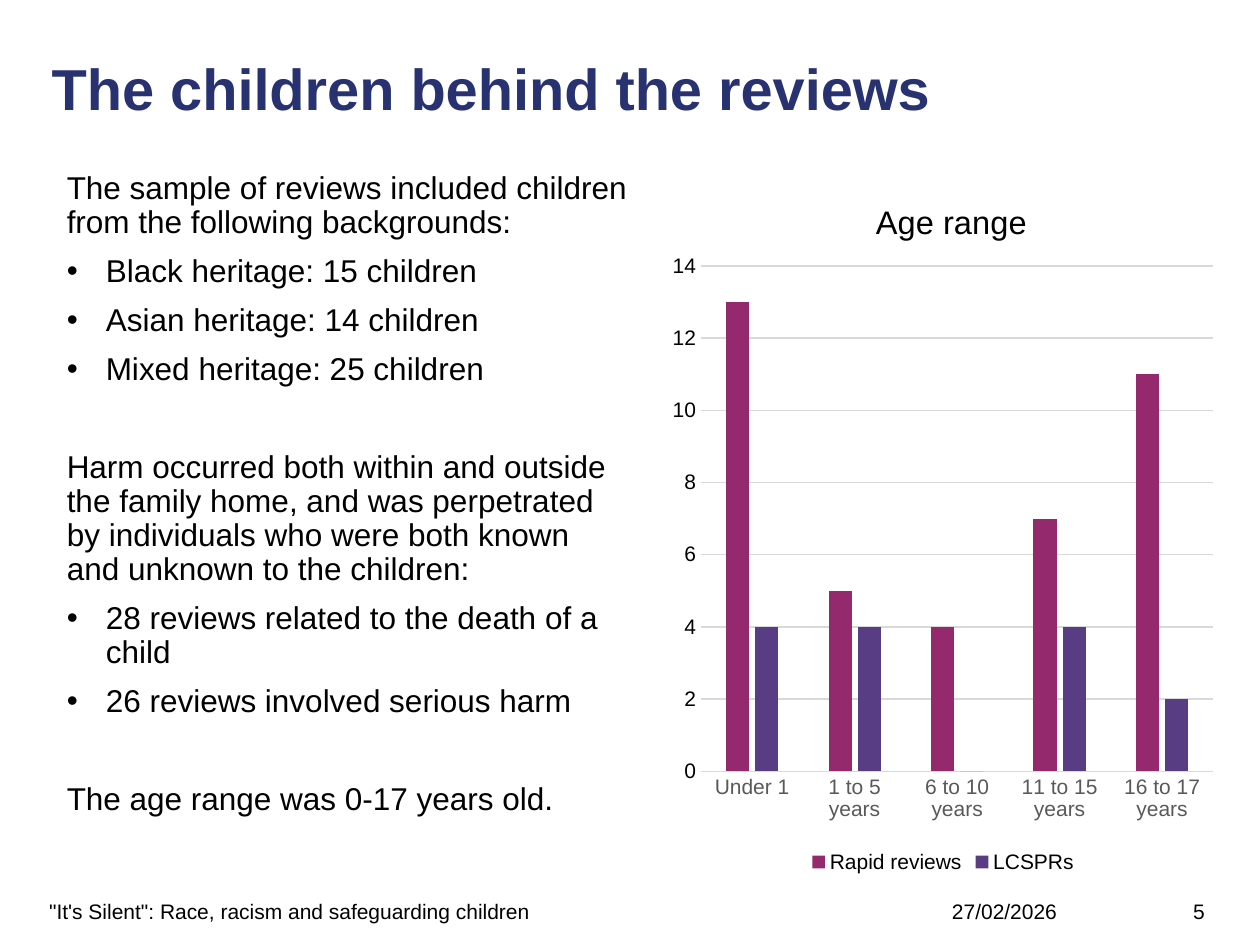
import pptx
import pptx.chart.data
import pptx.dml.color
import pptx.enum.chart
import pptx.enum.text
import pptx.oxml
import pptx.oxml.ns
import pptx.util
from pptx.util import Inches

NAVY = pptx.dml.color.RGBColor(0x28, 0x32, 0x71)
BLACK = pptx.dml.color.RGBColor(0, 0, 0)
GREY = pptx.dml.color.RGBColor(0x59, 0x59, 0x59)
PALE_GREY = pptx.dml.color.RGBColor(0xD9, 0xD9, 0xD9)
MAGENTA = pptx.dml.color.RGBColor(0x94, 0x2A, 0x6D)
PURPLE = pptx.dml.color.RGBColor(0x58, 0x3C, 0x84)

FINDINGS = [
    ("The sample of reviews included children from the following backgrounds:",
     ["Black heritage: 15 children",
      "Asian heritage: 14 children",
      "Mixed heritage: 25 children"]),
    ("Harm occurred both within and outside the family home, and was perpetrated "
     "by individuals who were both known and unknown to the children:",
     ["28 reviews related to the death of a child",
      "26 reviews involved serious harm"]),
    ("The age range was 0-17 years old.", []),
]
AGE_GROUPS = ["Under 1", "1 to 5 years", "6 to 10 years", "11 to 15 years", "16 to 17 years"]
REVIEW_COUNTS = [
    ("Rapid reviews", [13, 5, 4, 7, 11], MAGENTA),
    ("LCSPRs", [4, 4, 0, 4, 2], PURPLE),
]


def style_font(font, size, color, bold=False):
    font.name = "Arial"
    font.size = pptx.util.Pt(size)
    font.bold = bold
    font.color.rgb = color


def place(shape, left, top, width, height, anchor):
    shape.left, shape.top = Inches(left), Inches(top)
    shape.width, shape.height = Inches(width), Inches(height)
    frame = shape.text_frame
    frame.margin_left = frame.margin_top = frame.margin_right = frame.margin_bottom = 0
    frame.word_wrap = True
    frame.auto_size = pptx.enum.text.MSO_AUTO_SIZE.NONE
    frame.vertical_anchor = anchor
    return frame


def add_title(slide, wording):
    frame = place(slide.shapes.title, 0.41, 0.48, 9.19, 1.18,
                  pptx.enum.text.MSO_ANCHOR.TOP)
    frame.text = wording
    heading = frame.paragraphs[0]
    heading.alignment = pptx.enum.text.PP_ALIGN.LEFT
    heading.line_spacing = 0.9
    style_font(heading.font, 33, NAVY, bold=True)


def set_bullet(paragraph, bulleted):
    properties = paragraph._p.get_or_add_pPr()
    hang = Inches(0.31) if bulleted else 0
    properties.set("marL", str(hang))
    properties.set("indent", str(-hang))
    bullet = pptx.oxml.parse_xml(
        f'<a:{"buChar" if bulleted else "buNone"} {pptx.oxml.ns.nsdecls("a")}/>')
    if bulleted:
        bullet.set("char", "•")
    properties.append(bullet)


def add_findings(slide):
    frame = place(slide.placeholders[1], 0.53, 1.37, 4.47, 5.34,
                  pptx.enum.text.MSO_ANCHOR.TOP)
    lines = [(wording, position > 0, 28 if group > 0 and position == 0 else 0)
             for group, (lead, points) in enumerate(FINDINGS)
             for position, wording in enumerate([lead, *points])]
    for number, (wording, bulleted, gap) in enumerate(lines):
        paragraph = frame.add_paragraph() if number else frame.paragraphs[0]
        paragraph.text = wording
        set_bullet(paragraph, bulleted)
        paragraph.line_spacing = 0.9
        paragraph.space_before = pptx.util.Pt(gap)
        paragraph.space_after = pptx.util.Pt(8.5)
        style_font(paragraph.font, 18, BLACK)


def add_footer(slide, wording, left, width, alignment):
    footer = slide.shapes.add_textbox(0, 0, 0, 0)
    frame = place(footer, left, 7.13, width, 0.2, pptx.enum.text.MSO_ANCHOR.MIDDLE)
    frame.text = wording
    frame.paragraphs[0].alignment = alignment
    style_font(frame.paragraphs[0].font, 12, BLACK)


def set_layout(part, index, **fractions):
    for old in part.xpath("c:layout"):
        part.remove(old)
    modes = "".join(f'<c:{side}Mode val="edge"/>' for side in "xy")
    values = "".join(f'<c:{name} val="{value}"/>' for name, value in fractions.items())
    target = '<c:layoutTarget val="inner"/>' if "w" in fractions else ""
    part.insert(index, pptx.oxml.parse_xml(
        f'<c:layout {pptx.oxml.ns.nsdecls("c")}><c:manualLayout>'
        f'{target}{modes}{values}</c:manualLayout></c:layout>'))


def style_axis(axis, color):
    axis.major_tick_mark = axis.minor_tick_mark = pptx.enum.chart.XL_TICK_MARK.NONE
    style_font(axis.tick_labels.font, 12, color)


def style_line(line):
    line.color.rgb = PALE_GREY
    line.width = pptx.util.Pt(0.75)


def add_age_chart(slide):
    ages = pptx.chart.data.CategoryChartData()
    ages.categories = AGE_GROUPS
    for name, counts, _ in REVIEW_COUNTS:
        ages.add_series(name, counts)
    chart = slide.shapes.add_chart(
        pptx.enum.chart.XL_CHART_TYPE.COLUMN_CLUSTERED,
        Inches(5.25), Inches(1.32), Inches(4.47), Inches(5.65), ages).chart
    style_font(chart.font, 10, BLACK)

    chart.has_title = True
    chart.chart_title.include_in_layout = False
    chart.chart_title.text_frame.text = "Age range"
    style_font(chart.chart_title.text_frame.paragraphs[0].font, 18.6, BLACK)
    set_layout(chart.element.xpath("c:chart/c:title")[0], 1, x=0.37, y=0.04)
    set_layout(chart.element.xpath("c:chart/c:plotArea")[0], 0, x=0.07, y=0.14, w=0.91, h=0.71)

    chart.has_legend = True
    chart.legend.position = pptx.enum.chart.XL_LEGEND_POSITION.BOTTOM
    chart.legend.include_in_layout = False
    style_font(chart.legend.font, 12, BLACK)

    style_axis(chart.category_axis, GREY)
    style_line(chart.category_axis.format.line)
    counts_axis = chart.value_axis
    style_axis(counts_axis, BLACK)
    counts_axis.format.line.fill.background()
    counts_axis.minimum_scale, counts_axis.maximum_scale = 0, 14
    counts_axis.major_unit = 2
    style_line(counts_axis.major_gridlines.format.line)

    columns = chart.plots[0]
    columns.vary_by_categories = False
    columns.gap_width, columns.overlap = 219, -27
    for series, (_, _, color) in zip(columns.series, REVIEW_COUNTS):
        series.format.fill.solid()
        series.format.fill.fore_color.rgb = color


def main():
    deck = pptx.Presentation()
    deck.slide_width, deck.slide_height = Inches(10), Inches(7.5)
    slide = deck.slides.add_slide(deck.slide_layouts[1])
    add_title(slide, "The children behind the reviews")
    add_findings(slide)
    align = pptx.enum.text.PP_ALIGN
    add_footer(slide, "\"It's Silent\": Race, racism and safeguarding children",
               0.39, 5.91, align.LEFT)
    add_footer(slide, "27/02/2026", 6.42, 1.97, align.RIGHT)
    add_footer(slide, "5", 9.47, 0.39, align.LEFT)
    add_age_chart(slide)
    deck.save("out.pptx")


if __name__ == "__main__":
    main()
